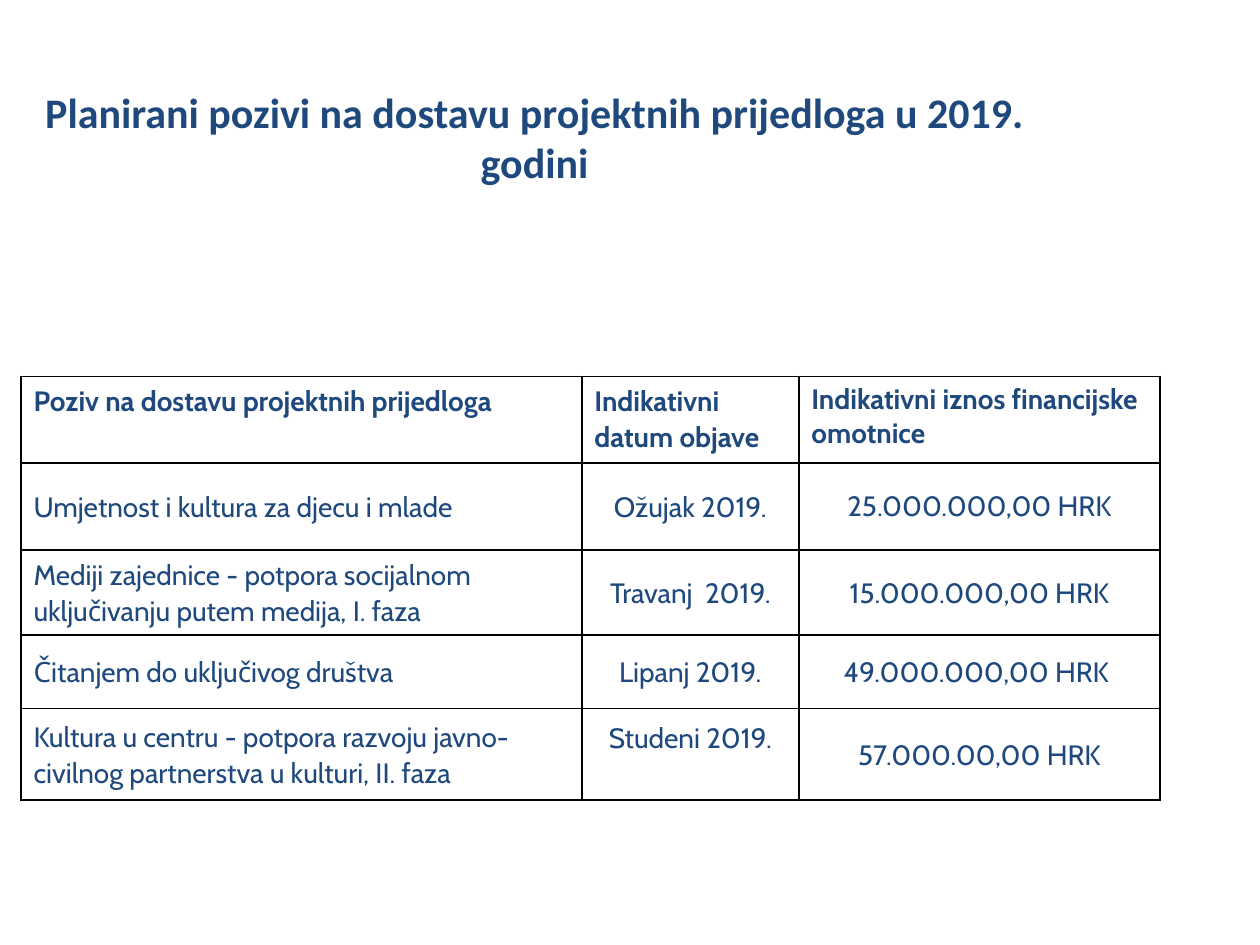
import pptx
import pptx.util
import pptx.dml.color
import pptx.enum.text
import pptx.oxml
import pptx.oxml.ns

Pt = pptx.util.Pt
ALIGN = pptx.enum.text.PP_ALIGN
ANCHOR = pptx.enum.text.MSO_ANCHOR
NAVY = pptx.dml.color.RGBColor(0x1F, 0x49, 0x7D)
BLACK = pptx.dml.color.RGBColor(0, 0, 0)

TITLE = "Planirani pozivi na dostavu projektnih prijedloga u 2019. godini"
CALLS = [
    ("Poziv na dostavu projektnih prijedloga", "Indikativni datum objave",
     "Indikativni iznos financijske omotnice"),
    ("Umjetnost i kultura za djecu i mlade", "Ožujak 2019.", "25.000.000,00 HRK"),
    ("Mediji zajednice - potpora socijalnom uključivanju putem medija, I. faza",
     "Travanj  2019.", "15.000.000,00 HRK"),
    ("Čitanjem do uključivog društva", "Lipanj 2019.", "49.000.000,00 HRK "),
    ("Kultura u centru - potpora razvoju javno-civilnog partnerstva u kulturi, II. faza",
     "Studeni 2019.", "57.000.00,00 HRK"),
]
COLUMN_WIDTHS = [320.5, 124, 206.5]
ROW_HEIGHTS = [49.7, 49.7, 48.6, 41.8, 52.5]
LINE_SPACING = 1.07
SINGLE_SPACED = [(0, 2), (1, 2)]
LAST_DATE = (4, 1)


def format_font(paragraph, name, size, bold):
    font = paragraph.font
    font.name, font.size, font.bold = name, Pt(size), bold
    font.color.rgb = NAVY


def add_title(slide):
    title = slide.shapes.title
    title.left, title.top, title.width, title.height = Pt(6), Pt(33), Pt(599), Pt(90)
    frame = title.text_frame
    frame.text = TITLE
    frame.word_wrap = True
    frame.vertical_anchor = ANCHOR.MIDDLE
    paragraph = frame.paragraphs[0]
    paragraph.alignment = ALIGN.CENTER
    format_font(paragraph, "Calibri", 24, True)


def add_borders(cell):
    """Draw a one-point line on each side; run before the fill is set, as lines come first."""
    properties = cell._tc.get_or_add_tcPr()
    for side in ("lnL", "lnR", "lnT", "lnB"):
        properties.append(pptx.oxml.parse_xml(
            f'<a:{side} {pptx.oxml.ns.nsdecls("a")} w="{Pt(1)}"><a:solidFill>'
            f'<a:srgbClr val="{BLACK}"/></a:solidFill></a:{side}>'))


def format_cell(cell, text, row, column):
    add_borders(cell)
    cell.fill.background()
    cell.text = text
    is_header = row == 0
    cell.vertical_anchor = ANCHOR.TOP if is_header else ANCHOR.MIDDLE
    if (row, column) == LAST_DATE:
        cell.vertical_anchor = ANCHOR.TOP
        cell.margin_top = Pt(6)
    paragraph = cell.text_frame.paragraphs[0]
    paragraph.alignment = ALIGN.LEFT if is_header or column == 0 else ALIGN.CENTER
    if (row, column) not in SINGLE_SPACED:
        paragraph.line_spacing = LINE_SPACING
    format_font(paragraph, "Cabin", 16, is_header)


def add_calls_table(slide):
    frame = slide.shapes.add_table(
        len(CALLS), len(COLUMN_WIDTHS), Pt(12), Pt(215),
        Pt(sum(COLUMN_WIDTHS)), Pt(sum(ROW_HEIGHTS)))
    table = frame.table
    table.horz_banding = False
    for column, width in zip(table.columns, COLUMN_WIDTHS):
        column.width = Pt(width)
    for row, height in zip(table.rows, ROW_HEIGHTS):
        row.height = Pt(height)
    for row, texts in enumerate(CALLS):
        for column, text in enumerate(texts):
            format_cell(table.cell(row, column), text, row, column)


def main():
    presentation = pptx.Presentation()
    presentation.slide_width, presentation.slide_height = Pt(720), Pt(540)
    slide = presentation.slides.add_slide(presentation.slide_layouts[5])
    add_title(slide)
    add_calls_table(slide)
    presentation.save("out.pptx")


if __name__ == "__main__":
    main()
